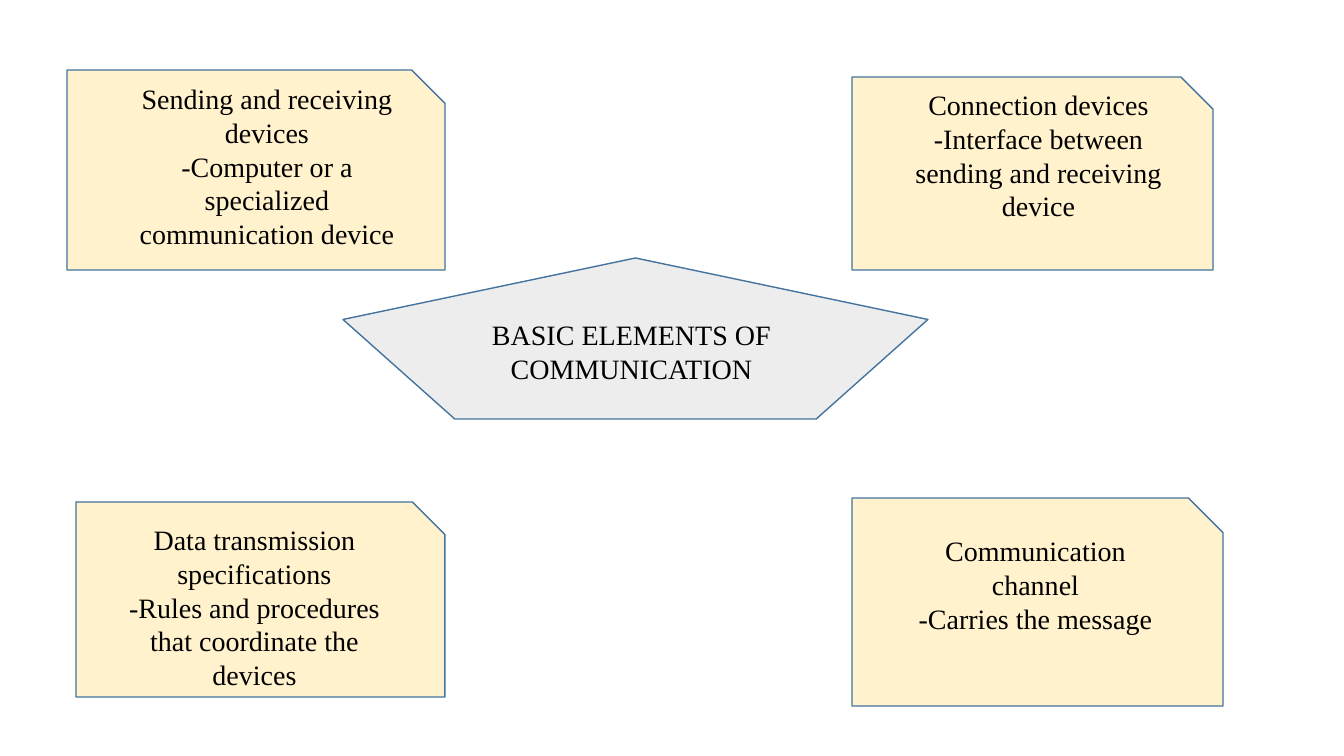
"""Build a slide showing the basic elements of communication around a central pentagon."""
from pptx import Presentation
from pptx.dml.color import RGBColor
from pptx.enum import shapes, text
from pptx.util import Emu, Pt

PX = 914400 / 100.8
THEME = {
    "font": "Times New Roman",
    "size": Pt(20),
    "ink": RGBColor.from_string("000000"),
    "outline": RGBColor.from_string("43739E"),
    "card": RGBColor.from_string("FFF2CC"),
    "center": RGBColor.from_string("EDEDED"),
    "line": Pt(1),
}

deck = Presentation()
deck.slide_width, deck.slide_height = Emu(12192000), Emu(6858000)
slide = deck.slides.add_slide(deck.slide_layouts[6])


def px(*lengths):
    return [Emu(round(length * PX)) for length in lengths]


def add_text(lines, at, indent=0, size=THEME["size"], color=THEME["ink"]):
    frame = slide.shapes.add_textbox(*px(*at)).text_frame
    frame.word_wrap = True
    frame.text = "\n".join(lines)
    for paragraph in frame.paragraphs:
        paragraph.alignment = text.PP_ALIGN.CENTER
        paragraph._p.get_or_add_pPr().set("marL", str(px(indent)[0]))
        paragraph.font.name = THEME["font"]
        paragraph.font.size = size
        paragraph.font.color.rgb = color


PENTAGON = shapes.MSO_SHAPE.REGULAR_PENTAGON
CARD = shapes.MSO_SHAPE.SNIP_1_RECTANGLE
outlines = [
    (PENTAGON, "center", (343, 258, 585, 161)),
    (CARD, "card", (67, 70, 378, 200)),
    (CARD, "card", (852, 77, 361, 193)),
    (CARD, "card", (76, 502, 369, 195)),
    (CARD, "card", (852, 498, 371, 208)),
]
for kind, fill, at in outlines:
    outline = slide.shapes.add_shape(kind, *px(*at))
    outline.shadow.inherit = False
    outline.fill.solid()
    outline.fill.fore_color.rgb = THEME[fill]
    outline.line.color.rgb = THEME["outline"]
    outline.line.width = THEME["line"]

add_text(["BASIC ELEMENTS OF COMMUNICATION"], (471, 313, 321, 78))

elements = [
    ("Sending and receiving devices", "-Computer or a specialized communication device", (76, 77, 332, 214)),
    ("Connection devices", "-Interface between sending and receiving device", (852, 83, 323, 179)),
    ("Data transmission specifications", "-Rules and procedures that coordinate the devices", (52, 518, 355, 214)),
    ("Communication channel", "-Carries the message", (852, 529, 317, 146)),
]
for element, role, at in elements:
    add_text([element, role], at, indent=50)

deck.save("out.pptx")
